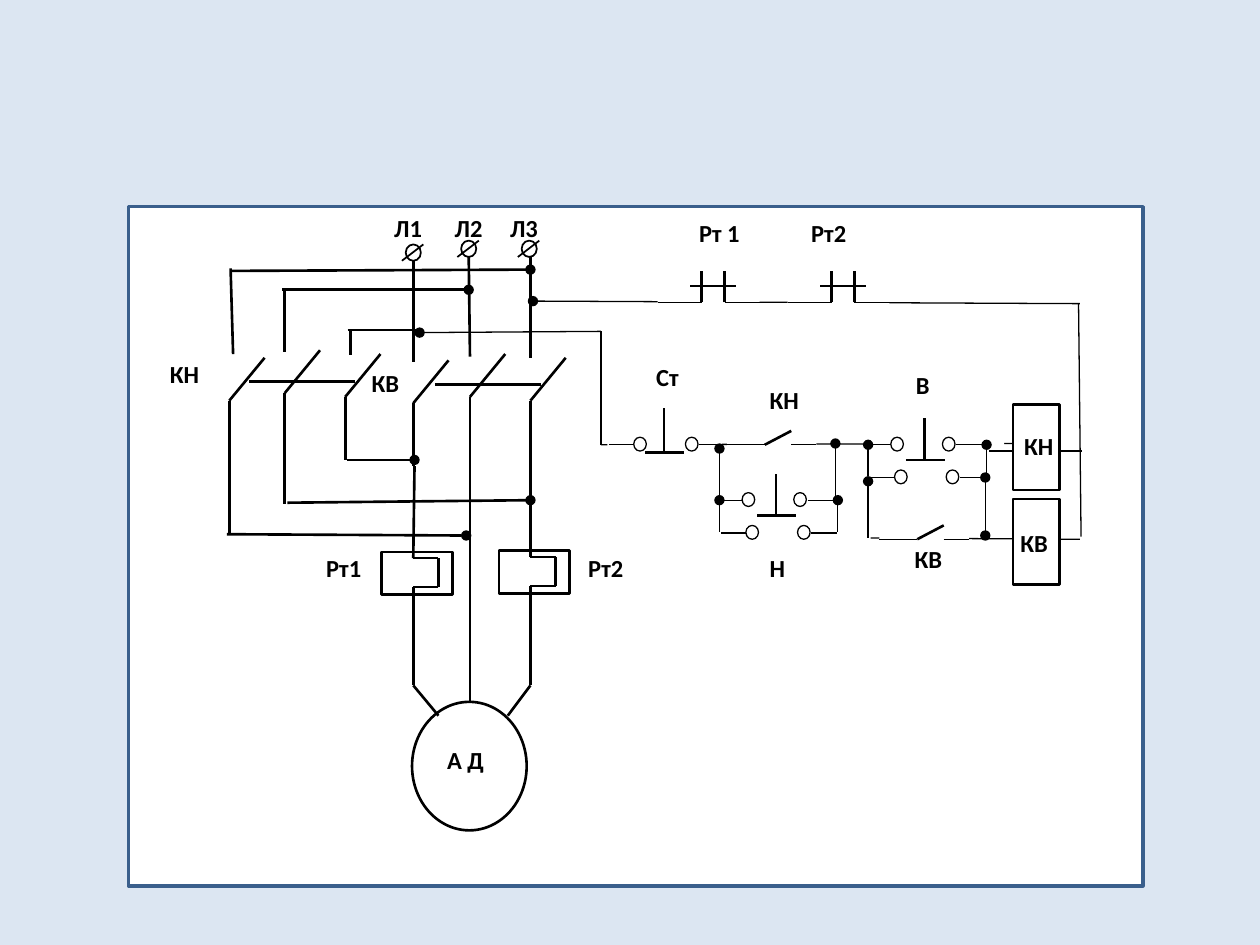
from lxml import etree
from pptx import Presentation, util as u
from pptx.dml.color import RGBColor
from pptx.enum import shapes as sh
from pptx.oxml import ns

# Theme: colours, line weights, type
THEME = dict(page="DCE6F2", paper="FFFFFF", ink="000000", frame="3A5F8C",
             thin=0.75, mid=1, bold=1.5, edge=2, font="Calibri", size=14)
THIN, MID, BOLD = THEME["thin"], THEME["mid"], THEME["bold"]
SIZE = (10, 7.5)
FRAME = (1.02, 1.64, 8.05, 5.39)

# Labels: text, left, top, width, tab stops
LABELS = [
    ("Рт 1\tРт2", 5.45, 1.68, 1.66, [0.89]),
    ("КН", 8.03, 3.37, 0.64, []), ("КВ", 8.0, 4.14, 0.6, []),
    ("Н", 6.01, 4.34, 0.37, []), ("В", 7.17, 2.89, 0.37, []),
    ("КВ", 7.16, 4.27, 0.55, []), ("КН", 6.01, 3.01, 0.55, []),
    ("Ст", 5.11, 2.82, 0.55, []), ("КВ", 2.85, 2.87, 0.55, []),
    ("Рт1\tРт2", 2.49, 4.34, 2.59, [2.08]),
    ("Л1\tЛ2\tЛ3", 3.03, 1.64, 1.7, [0.48, 0.92]),
    ("КН", 1.25, 2.8, 0.55, []), ("А Д", 3.45, 5.86, 0.71, []),
]

# Wires: points, weight, dots at the start (s) or end (e)
FEED = [
    ([(6.91, 4.27), (8.57, 4.28)], THIN, ""),
    ([(3.33, 2.64), (4.77, 2.63)], THIN, "s"),
    ([(4.77, 2.63), (4.77, 3.53), (8.04, 3.52)], THIN, ""),
    ([(8.57, 2.41), (4.23, 2.39)], THIN, "e"),
]
LINKS = [
    ([(6.63, 3.52), (6.63, 3.97)], THIN, "s"),
    ([(5.71, 3.56), (5.71, 4.01)], THIN, "s"),
    ([(6.89, 3.82), (6.89, 4.27)], THIN, "s"),
    ([(7.82, 3.79), (7.82, 4.25)], THIN, "se"),
    ([(7.85, 3.58), (8.59, 3.58)], THIN, ""),
    ([(8.58, 4.26), (8.56, 2.41)], THIN, ""),
]
POWER = [
    ([(3.28, 2.87), (3.28, 2.06)], BOLD, ""),
    ([(3.73, 2.83), (3.72, 2.02)], BOLD, ""),
    ([(4.21, 2.84), (4.21, 2.03)], BOLD, ""),
    ([(3.29, 3.7), (3.28, 4.43)], BOLD, ""),
    ([(4.21, 3.66), (4.21, 4.42)], BOLD, ""),
    ([(3.73, 5.56), (3.73, 3.64)], BOLD, ""),
    ([(3.28, 4.66), (3.28, 5.44), (3.48, 5.68)], BOLD, ""),
    ([(4.21, 4.65), (4.21, 5.44), (4.03, 5.68)], BOLD, ""),
    ([(4.29, 3.05), (3.45, 3.05)], BOLD, ""),
    ([(2.82, 3.03), (1.98, 3.03)], BOLD, ""),
    ([(2.26, 2.79), (2.26, 2.31)], BOLD, ""),
    ([(2.75, 3.65), (3.29, 3.65)], BOLD, "e"),
    ([(3.72, 2.3), (2.24, 2.3)], BOLD, "s"),
    ([(2.26, 3.62), (2.26, 4)], BOLD, ""),
    ([(2.28, 3.99), (4.21, 3.97)], BOLD, "e"),
    ([(4.21, 2.14), (1.83, 2.15)], BOLD, "s"),
    ([(1.85, 2.81), (1.83, 2.13)], BOLD, ""),
    ([(1.82, 3.35), (1.82, 4.24)], BOLD, ""),
    ([(1.8, 4.24), (3.7, 4.25)], BOLD, "e"),
    ([(2.76, 2.62), (3.3, 2.62)], BOLD, ""),
    ([(2.78, 2.63), (2.78, 2.82)], BOLD, ""),
]

# Symbols: left and top of each
POLES = [(4.21, 3.18), (3.73, 3.15), (3.28, 3.2),
         (2.74, 3.15), (2.26, 3.12), (1.82, 3.18)]
HEATERS = [(3.03, 4.38), (3.96, 4.37)]
ENDS = [(4.14, 1.91), (3.66, 1.91), (3.22, 1.94)]
COILS = [(8.04, 3.21), (8.04, 3.96)]
MOTOR = (3.27, 5.57, 0.91, 1.02)

deck = Presentation()
deck.slide_width, deck.slide_height = map(u.Inches, SIZE)
slide = deck.slides.add_slide(deck.slide_layouts[6])
slide.background.fill.solid()
slide.background.fill.fore_color.rgb = RGBColor.from_string(THEME["page"])


def shape(box, weight=0, tint="ink", round_=False):
    kind = sh.MSO_SHAPE.OVAL if round_ else sh.MSO_SHAPE.RECTANGLE
    item = slide.shapes.add_shape(kind, *map(u.Inches, box))
    item.shadow.inherit = False
    item.fill.solid()
    item.fill.fore_color.rgb = RGBColor.from_string(THEME["paper"])
    if weight:
        item.line.color.rgb = RGBColor.from_string(THEME[tint])
        item.line.width = u.Pt(weight)
    else:
        item.line.fill.background()


def wire(points, weight=THIN, dots=""):
    for a, b in zip(points, points[1:]):
        item = slide.shapes.add_connector(sh.MSO_CONNECTOR.STRAIGHT, *map(u.Inches, a + b))
        item.line.color.rgb = RGBColor.from_string(THEME["ink"])
        item.line.width = u.Pt(weight)
        props = item._element.spPr
        for key, tag in (("s", "a:headEnd"), ("e", "a:tailEnd")):
            if key in dots:
                etree.SubElement(props.find(ns.qn("a:ln")), ns.qn(tag), type="oval")
        etree.SubElement(props, ns.qn("a:effectLst"))


def path(x, y, steps, weight=THIN, dots=""):
    wire([(x + dx, y + dy) for dx, dy in steps], weight, dots)


def pair(x, y):
    """Two round contacts with leads."""
    for dx, near, far in ((0, 0, -0.2), (0.41, 0.1, 0.31)):
        shape((x + dx, y, 0.1, 0.11), THIN, round_=True)
        path(x, y, [(dx + near - 0.41 * (dx > 0) if dx == 0 else 0.52, 0.06),
                    (far if dx == 0 else 0.72, 0.06)])


def bar(x, y, stem):
    """Push-button head."""
    path(x, y, [(0, 0), (0.31, 0)], BOLD)
    path(x, y, [(0.15, 0), (0.15, -stem)], BOLD)


def double(x, y):
    """Button with two rows of contacts."""
    pair(x, y)
    pair(x + 0.03, y + 0.26)
    bar(x + 0.12, y + 0.18, 0.33)
    for dx in (-0.18, 0.76):
        path(x, y, [(dx, 0.31), (dx, 0.06)], THIN, "e")


def closed(x, y):
    """Normally closed relay contact."""
    shape((x, y - 0.3, 0.81, 0.38))
    path(x, y, [(0, 0), (0.35, 0)])
    path(x, y, [(0.53, 0), (0.81, 0)])
    for dx in (0.35, 0.53):
        path(x, y, [(dx, 0), (dx, -0.25)], BOLD)
    path(x, y, [(0.26, -0.13), (0.62, -0.13)], BOLD)


def opened(x, y):
    """Normally open contact."""
    shape((x, y - 0.23, 0.71, 0.34))
    path(x, y, [(0, 0), (0.3, 0)])
    path(x, y, [(0.3, 0), (0.51, -0.11)], BOLD)
    path(x, y, [(0.51, 0), (0.71, 0)])


def label(words, x, y, width, tabs):
    frame = slide.shapes.add_textbox(*map(u.Inches, (x, y, width, 0.38))).text_frame
    frame.word_wrap = True
    frame.text = words
    para = frame.paragraphs[0]
    para.space_after = u.Pt(10)
    if tabs:
        stops = etree.SubElement(para._p.get_or_add_pPr(), ns.qn("a:tabLst"))
        for stop in tabs:
            etree.SubElement(stops, ns.qn("a:tab"), pos=str(u.Inches(stop)), algn="l")
    for run in para.runs:
        run.font.name, run.font.size, run.font.bold = THEME["font"], u.Pt(THEME["size"]), True
        run.font.color.rgb = RGBColor.from_string(THEME["ink"])


# Control circuit
shape(FRAME, THEME["edge"], "frame")
for line in FEED:
    wire(*line)
shape((4.82, 3.35, 0.91, 0.34))
bar(5.12, 3.59, 0.35)
pair(5.03, 3.47)
for left in (5.22, 6.25):
    closed(left, 2.4)
opened(5.77, 3.53)
double(5.89, 3.91)
shape((6.86, 3.32, 1.11, 0.57))
double(7.07, 3.47)
opened(6.98, 4.28)
for line in LINKS:
    wire(*line)
for x, y in COILS:
    shape((x, y, 0.37, 0.68), BOLD)

# Power circuit
shape(MOTOR, BOLD, round_=True)
for x, y in HEATERS:
    shape((x, y, 0.56, 0.34), BOLD)
    path(x, y, [(0.25, 0.05), (0.45, 0.05), (0.45, 0.28), (0.25, 0.28)], BOLD)
for x, y in POLES:
    path(x, y, [(0, 0.5), (0, 0), (0.28, -0.34)], BOLD)
for line in POWER:
    wire(*line)
for x, y in ENDS:
    shape((x, y, 0.12, 0.13), MID, round_=True)
    path(x, y, [(0.14, 0), (-0.03, 0.13)], MID)

# Labels
for item in LABELS:
    label(*item)

deck.save("out.pptx")
